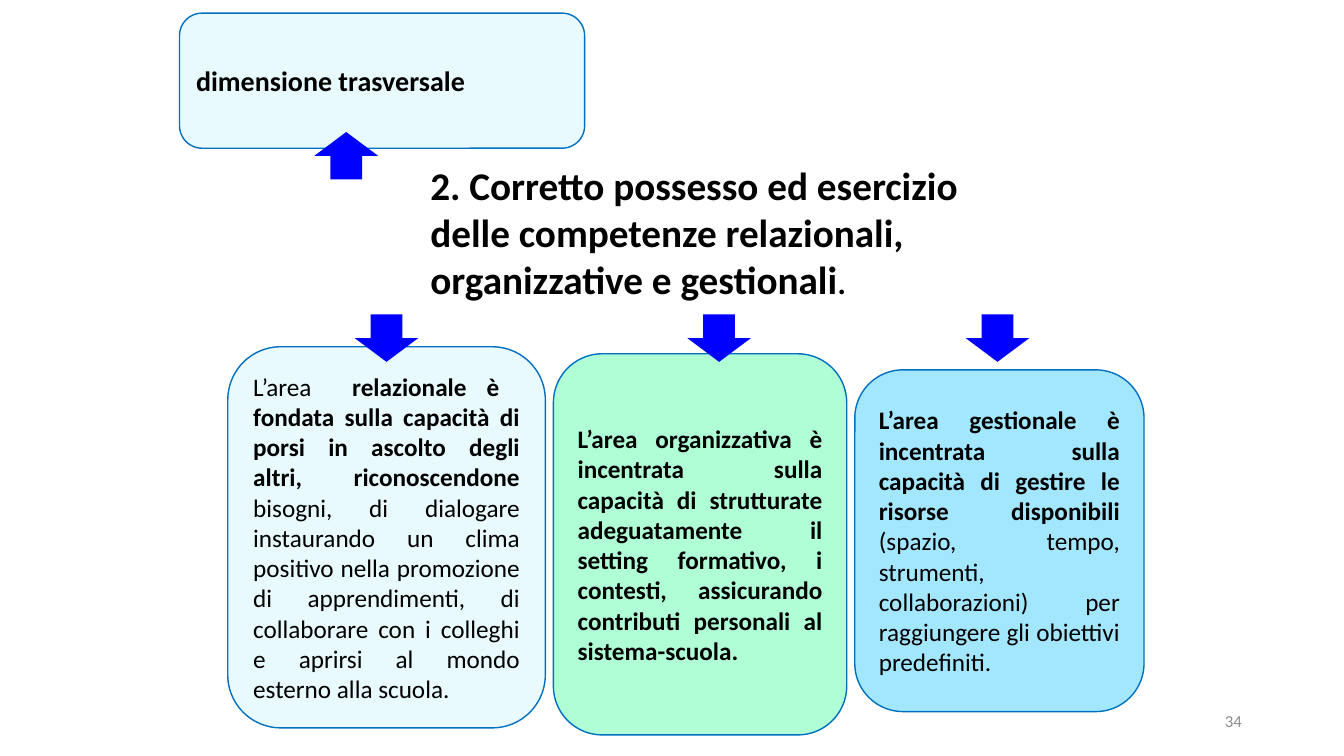
from pptx import Presentation
from pptx.dml.color import RGBColor
from pptx.enum.shapes import MSO_SHAPE as Shape
from pptx.enum.text import MSO_ANCHOR as Anchor, MSO_AUTO_SIZE as AutoSize, PP_ALIGN as Align
from pptx.util import Pt

BLACK = RGBColor(0x00, 0x00, 0x00)
GREY = RGBColor(0x8C, 0x8C, 0x8C)
BORDER = RGBColor(0x00, 0x70, 0xC0)
ARROW = RGBColor(0x00, 0x00, 0xFF)
PALE = RGBColor(0xE8, 0xFA, 0xFE)
GREEN = RGBColor(0xB0, 0xFE, 0xD5)
SKY = RGBColor(0xA3, 0xE7, 0xFF)


class SlideBuilder:
    """Holds the style and the current slide; lengths are in points."""

    font = "Calibri"
    arrow_size = (45.4, 33.9)

    def __init__(self, page):
        self.page = page

    def fill_text(self, frame, spans, size, align=Align.LEFT, anchor=Anchor.MIDDLE, color=BLACK):
        frame.word_wrap = True
        frame.auto_size = AutoSize.NONE
        frame.vertical_anchor = anchor
        para = frame.paragraphs[0]
        para.alignment = align
        for text, bold in spans:
            span = para.add_run()
            span.text = text
            span.font.name = self.font
            span.font.size = Pt(size)
            span.font.bold = bold
            span.font.color.rgb = color

    def title(self, left, top, width, height, spans, size):
        title = self.page.shapes.title
        title.left, title.top, title.width, title.height = map(Pt, (left, top, width, height))
        self.fill_text(title.text_frame, spans, size, anchor=Anchor.TOP)

    def card(self, left, top, width, height, fill, spans, size=18, align=Align.JUSTIFY):
        box = self.page.shapes.add_shape(
            Shape.ROUNDED_RECTANGLE, *map(Pt, (left, top, width, height)))
        box.shadow.inherit = False
        box.fill.solid()
        box.fill.fore_color.rgb = fill
        box.line.color.rgb = BORDER
        box.line.width = Pt(1)
        self.fill_text(box.text_frame, spans, size, align)

    def arrow(self, left, top, rotation=0):
        arrow = self.page.shapes.add_shape(
            Shape.DOWN_ARROW, Pt(left), Pt(top), *map(Pt, self.arrow_size))
        arrow.rotation = rotation
        arrow.shadow.inherit = False
        arrow.fill.solid()
        arrow.fill.fore_color.rgb = ARROW
        arrow.line.fill.background()

    def label(self, left, top, width, height, text, size, color):
        box = self.page.shapes.add_textbox(*map(Pt, (left, top, width, height)))
        self.fill_text(box.text_frame, [(text, False)], size, Align.RIGHT, color=color)


def main():
    deck = Presentation()
    deck.slide_width, deck.slide_height = Pt(960), Pt(540)
    slide = SlideBuilder(deck.slides.add_slide(deck.slide_layouts[5]))

    # Central statement
    slide.title(300.2, 111.6, 418.3, 108.7, [
        ("2. Corretto possesso ed esercizio delle competenze relazionali, "
         "organizzative e gestionali", True),
        (".", False)], 28)

    # Dimension above the statement
    slide.card(128.2, 9.4, 289.4, 96.5, PALE,
               [("dimensione trasversale", True)], 20, Align.LEFT)
    slide.arrow(224.6, 94.3, 180)

    # Three areas below the statement
    slide.card(162.7, 247.7, 226.8, 272.2, PALE, [
        ("L’area  ", False),
        ("relazionale è  fondata sulla capacità di porsi in ascolto degli altri, "
         "riconoscendone ", True),
        ("bisogni, di dialogare instaurando un clima positivo nella promozione di "
         "apprendimenti, di collaborare con i colleghi e aprirsi al mondo esterno "
         "alla scuola.", False)])
    slide.card(395.3, 252.7, 209.5, 272.2, GREEN, [
        ("L’area organizzativa è incentrata sulla capacità di strutturate "
         "adeguatamente il setting formativo, i contesti, assicurando contributi "
         "personali al sistema-scuola.", True)])
    slide.card(610.6, 264.2, 206.6, 244.1, SKY, [
        ("L’area gestionale è incentrata sulla capacità di gestire le risorse "
         "disponibili ", True),
        ("(spazio, tempo, strumenti, collaborazioni) per raggiungere gli obiettivi "
         "predefiniti.", False)])
    for left in (253.4, 491, 689.8):
        slide.arrow(left, 224.6)

    # Page number
    slide.label(678.2, 500.4, 216, 28.8, "34", 12, GREY)

    deck.save("out.pptx")


if __name__ == "__main__":
    main()
